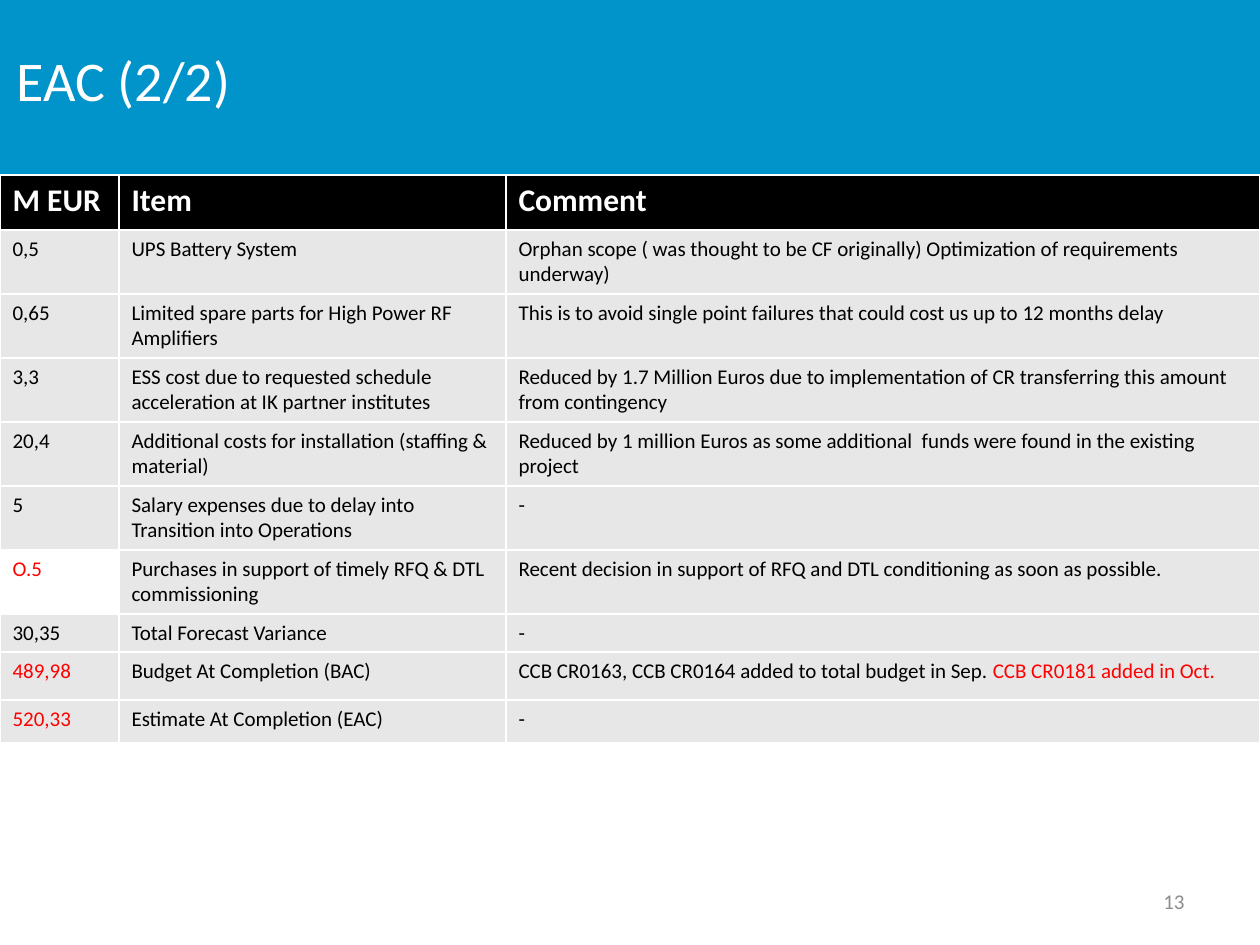
import pptx
import pptx.util
import pptx.dml.color
import pptx.enum.shapes
import pptx.enum.text

Pt = pptx.util.Pt
Align = pptx.enum.text.PP_ALIGN
Anchor = pptx.enum.text.MSO_ANCHOR
SCALE = 914400 / 126  # EMU per px
BLACK, WHITE, RED, GREY = "000000", "FFFFFF", "FF0000", "E7E7E7"


def px(*sizes):
    return [round(size * SCALE) for size in sizes]


def paint(target, color):
    target.rgb = pptx.dml.color.RGBColor.from_string(color)


deck = pptx.Presentation()
deck.slide_width, deck.slide_height = px(1260, 945)
slide = deck.slides.add_slide(deck.slide_layouts[5])
shapes = slide.shapes

# Header band, sent behind the title
band = shapes.add_shape(pptx.enum.shapes.MSO_SHAPE.RECTANGLE, *px(0, 0, 1260, 198))
band.shadow.inherit = False
band.fill.solid()
paint(band.fill.fore_color, "0094CA")
band.line.fill.background()
shapes._spTree.insert(2, band._element)

# Title and page number
title = shapes.title
title.left, title.top, title.width, title.height = px(4, 0, 984, 158)
page = shapes.add_textbox(*px(903, 876, 294, 50))
labels = [
    (title, "EAC (2/2)", Align.LEFT, 32, WHITE),
    (page, "13", Align.RIGHT, 12, "8C8C8C"),
]
for box, text, align, size, color in labels:
    frame = box.text_frame
    frame.text = text
    for name, value in {
        "word_wrap": True,
        "auto_size": pptx.enum.text.MSO_AUTO_SIZE.NONE,
        "vertical_anchor": Anchor.MIDDLE,
    }.items():
        setattr(frame, name, value)
    para = frame.paragraphs[0]
    para.alignment = align
    para.font.name, para.font.size = "Calibri", Pt(size)
    paint(para.font.color, color)

# Table content: each row is amount, item, comment
rows = [
    ("M EUR", "Item", "Comment"),
    ("0,5", "UPS Battery System",
     "Orphan scope ( was thought to be CF originally) Optimization of requirements underway)"),
    ("0,65", "Limited spare parts for High Power RF Amplifiers",
     "This is to avoid single point failures that could cost us up to 12 months delay"),
    ("3,3", "ESS cost due to requested schedule acceleration at IK partner institutes",
     "Reduced by 1.7 Million Euros due to implementation of CR transferring this amount "
     "from contingency"),
    ("20,4", "Additional costs for installation (staffing & material)",
     "Reduced by 1 million Euros as some additional  funds were found in the existing project"),
    ("5", "Salary expenses due to delay into Transition into Operations", "-"),
    ("O.5", "Purchases in support of timely RFQ & DTL commissioning",
     "Recent decision in support of RFQ and DTL conditioning as soon as possible."),
    ("30,35", "Total Forecast Variance", "-"),
    ("489,98", "Budget At Completion (BAC)",
     "CCB CR0163, CCB CR0164 added to total budget in Sep. CCB CR0181 added in Oct."),
    ("520,33", "Estimate At Completion (EAC)", "-"),
]
news = {"O.5", "489,98", "520,33", "CCB CR0181 added in Oct."}  # shown in red
heights = [55] + [64] * 6 + [38, 48, 43]
widths = [119, 387, 754]

# Table
frame = shapes.add_table(len(rows), len(widths), *px(0, 175, sum(widths), sum(heights)))
table = frame.table
for col, width in zip(table.columns, px(*widths)):
    col.width = width
for row, height in zip(table.rows, px(*heights)):
    row.height = height

for r, row in enumerate(rows):
    head = r == 0
    style = {"name": "Calibri", "size": Pt(18 if head else 12), "bold": head}
    for c, text in enumerate(row):
        cell = table.cell(r, c)
        if text == "O.5":
            cell.fill.background()
        else:
            cell.fill.solid()
            paint(cell.fill.fore_color, BLACK if head else GREY)

        # Split off a red ending where there is one
        tail = next((word for word in news if text.endswith(word)), "")
        para = cell.text_frame.paragraphs[0]
        for part in filter(None, (text.removesuffix(tail), tail)):
            run = para.add_run()
            run.text = part
            for name, value in style.items():
                setattr(run.font, name, value)
            paint(run.font.color, WHITE if head else RED if part in news else BLACK)

deck.save("out.pptx")
